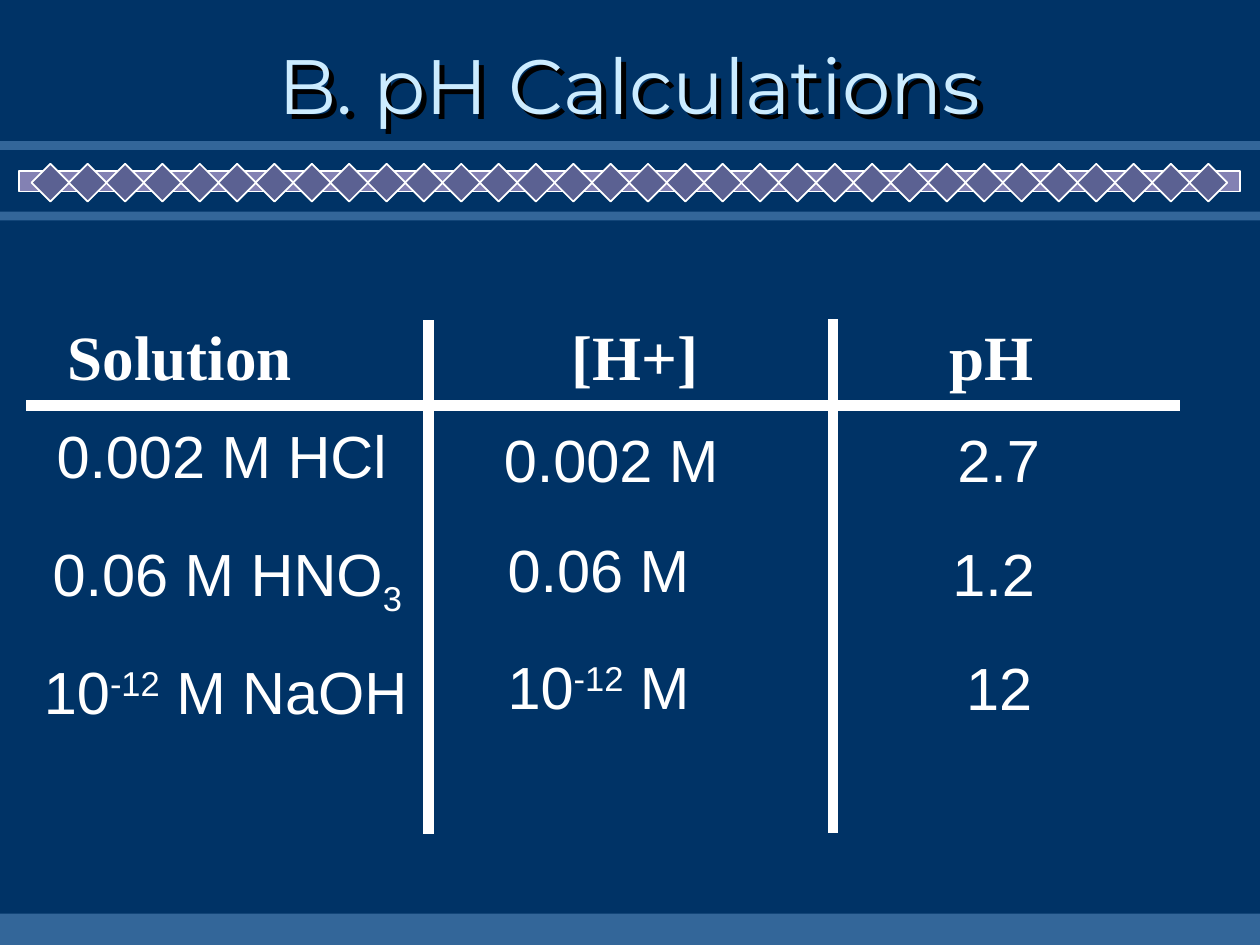
from lxml.etree import SubElement
from pptx import Presentation
from pptx.dml.color import RGBColor
from pptx.enum.shapes import MSO_CONNECTOR as CONN, MSO_SHAPE as SHAPE
from pptx.enum.text import MSO_ANCHOR as ANCHOR, PP_ALIGN as ALIGN
from pptx.oxml import parse_xml
from pptx.oxml.ns import nsdecls, qn
from pptx.util import Inches, Pt

prs = Presentation()
prs.slide_width, prs.slide_height = Inches(10), Inches(7.5)
COL, ROW = prs.slide_width / 100, prs.slide_height / 75

WHITE, BAND = "FFFFFF", "336699"
SHADOW = (
    f'<a:effectLst {nsdecls("a")}><a:outerShdw dist="53882" dir="2700000">'
    '<a:srgbClr val="000000"/></a:outerShdw></a:effectLst>'
)
ROWS = [
    [(1, 8.1, 28.5, [("0.002 M HCl", 0)]),
     (36.5, 8.4, 22.9, [("0.002 M", 0)]),
     (72.5, 8.4, 13.1, [("2.7", 0)])],
    [(0.7, 17.4, 30.7, [("0.06 M HNO", 0), ("3", -25)]),
     (36.8, 17.1, 22.9, [("0.06 M", 0)]),
     (72.1, 17.4, 13.1, [("1.2", 0)])],
    [(0, 26.8, 32.8, [("10", 0), ("-12", 30), (" M NaOH", 0)]),
     (36.8, 26.4, 22.9, [("10", 0), ("-12", 30), (" M", 0)]),
     (73.2, 26.5, 13.1, [("12", 0)])],
]


def rgb(value):
    return RGBColor.from_string(value)


def grid(x, y, w, h):
    return round(x * COL), round(y * ROW), round(w * COL), round(h * ROW)


def add_text(s, box, runs, size=34, font="Arial", color=WHITE, bold=False,
             align=ALIGN.LEFT, anchor=ANCHOR.TOP, before=0, tabs=(), shadow=False):
    sp = s.shapes.add_textbox(*grid(*box))
    if shadow:
        sp._element.spPr.append(parse_xml(SHADOW))
    tf = sp.text_frame
    tf.word_wrap = True
    tf.vertical_anchor = anchor
    p = tf.paragraphs[0]
    p.alignment = align
    pPr = p._p.get_or_add_pPr()
    if before:
        spacing = SubElement(pPr, qn("a:spcBef"))
        SubElement(spacing, qn("a:spcPct")).set("val", str(before * 1000))
    if tabs:
        stops = SubElement(pPr, qn("a:tabLst"))
        for tab in tabs:
            SubElement(stops, qn("a:tab"), pos=str(round(tab * COL)), algn="l")
    for text, baseline in runs:
        r = p.add_run()
        r.text = text
        r.font.size, r.font.name, r.font.bold = Pt(size), font, bold
        r.font.color.rgb = rgb(color)
        if baseline:
            r.font._element.set("baseline", str(baseline * 1000))


def add_block(s, kind, box, fill, line=None):
    sp = s.shapes.add_shape(kind, *grid(*box))
    sp.shadow.inherit = False
    sp.fill.solid()
    sp.fill.fore_color.rgb = rgb(fill)
    if line:
        sp.line.color.rgb = rgb(line)
        sp.line.width = Pt(1)
    else:
        sp.line.fill.background()


def add_rule(s, x, y, w, h):
    left, top, width, height = grid(x, y, w, h)
    rule = s.shapes.add_connector(CONN.STRAIGHT, left, top, left + width, top + height)
    rule.line.color.rgb = rgb(WHITE)
    rule.line.width = Pt(6)
    spPr = rule._element.spPr
    spPr.find(qn("a:ln")).set("cap", "sq")
    SubElement(spPr, qn("a:effectLst"))


def diamond_border(s, x, y, w, h, count=32, size=3):
    for top in (y, y + h - 0.7):
        add_block(s, SHAPE.RECTANGLE, (x, top, w, 0.7), BAND)
    add_block(s, SHAPE.RECTANGLE, (x + 1.5, y + 2.4, w - 3.1, 1.6), "8381B3", WHITE)
    first, last = x + 2.5, x + w - 5.6
    pitch = (last - first) / (count - 1)
    for i in range(count):
        add_block(s, SHAPE.DIAMOND, (first + i * pitch, y + 1.8, size, size), "5B6192", WHITE)


def ph_table(s, x, y, w, h):
    add_text(s, (x + 1.9, y, w + 2.4, 7), [("Solution\t[H+]\tpH", 0)],
             size=36, font="Times New Roman", bold=True, before=50, tabs=(40, 70))
    add_rule(s, x, y + 7.5, w, 0)
    add_rule(s, x + 31.5, y + 1.1, 0, h - 1.1)
    add_rule(s, x + 63.6, y + 1, 0, h - 1.1)
    for row in ROWS:
        for dx, dy, width, runs in row:
            add_text(s, (x + dx, y + dy, width, 8.1), runs, before=20)


def main():
    s = prs.slides.add_slide(prs.slide_layouts[6])
    s.background.fill.solid()
    s.background.fill.fore_color.rgb = rgb("003366")
    diamond_border(s, 0, 11.2, 100, 6.3)
    add_block(s, SHAPE.RECTANGLE, (0, 72.5, 100, 2.5), BAND)
    add_text(s, (7.5, 2.5, 85, 8.3), [("B. pH Calculations", 0)], size=44,
             font="Montserrat", color="CCECFF", align=ALIGN.CENTER,
             anchor=ANCHOR.MIDDLE, shadow=True)
    ph_table(s, 2.5, 24.7, 90.7, 41.1)
    prs.save("out.pptx")


if __name__ == "__main__":
    main()
